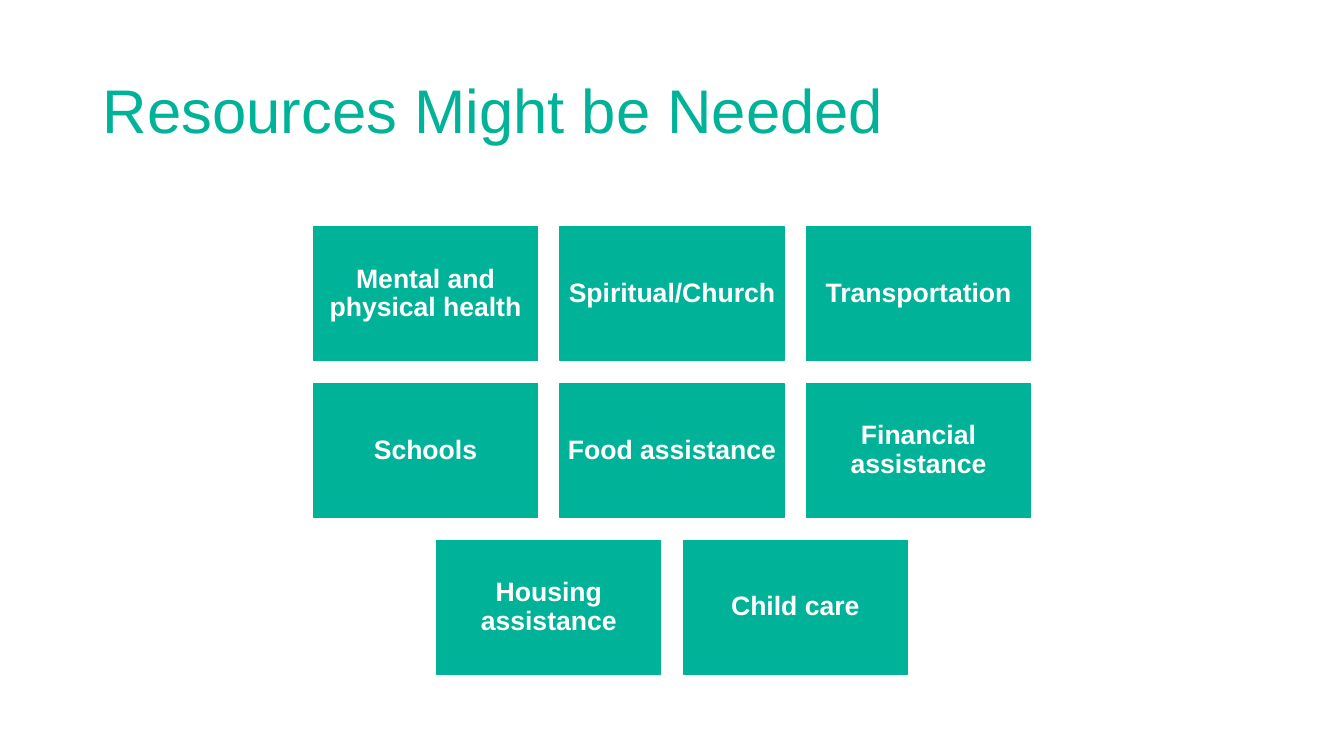
from dataclasses import dataclass

from pptx import Presentation
from pptx.dml.color import RGBColor
from pptx.enum.shapes import MSO_SHAPE
from pptx.enum.text import MSO_ANCHOR, PP_ALIGN
from pptx.util import Inches, Pt


@dataclass(frozen=True)
class Theme:
    """Hold the colours, type sizes and font of the slide."""
    green: RGBColor = RGBColor.from_string("00B398")
    white: RGBColor = RGBColor.from_string("FFFFFF")
    title_size: int = 44
    card_size: int = 19
    font: str = "Arial"


@dataclass(frozen=True)
class Grid:
    """Place centred rows of cards, in inches."""
    center: float = 6.665
    top: float = 2.25
    card_width: float = 2.22
    card_height: float = 1.33
    column_step: float = 2.445
    row_step: float = 1.555

    def cell(self, row, column, columns):
        """Return left, top, width and height of one card."""
        middle = self.center + (column - (columns - 1) / 2) * self.column_step
        return (middle - self.card_width / 2, self.top + row * self.row_step,
                self.card_width, self.card_height)


THEME = Theme()
GRID = Grid()
RESOURCES = [
    ["Mental and physical health", "Spiritual/Church", "Transportation"],
    ["Schools", "Food assistance", "Financial assistance"],
    ["Housing assistance", "Child care"],
]


def write_text(box, text, *, size, color, bold=False, align=PP_ALIGN.LEFT, inset=(0.1, 0.05)):
    """Write one formatted paragraph in the middle of a box."""
    frame = box.text_frame
    frame.word_wrap = True
    frame.vertical_anchor = MSO_ANCHOR.MIDDLE
    frame.margin_left = frame.margin_right = Inches(inset[0])
    frame.margin_top = frame.margin_bottom = Inches(inset[1])
    para = frame.paragraphs[0]
    para.alignment = align
    para.line_spacing = 0.9
    span = para.add_run()
    span.text = text
    span.font.name = THEME.font
    span.font.size = Pt(size)
    span.font.bold = bold
    span.font.color.rgb = color


def add_title(page, text):
    """Add the slide title."""
    box = page.shapes.add_textbox(*map(Inches, (0.92, 0.4, 11.5, 1.45)))
    write_text(box, text, size=THEME.title_size, color=THEME.green)


def add_card(page, text, place):
    """Add one green resource card."""
    card = page.shapes.add_shape(MSO_SHAPE.RECTANGLE, *map(Inches, place))
    card.shadow.inherit = False
    card.fill.solid()
    card.fill.fore_color.rgb = THEME.green
    card.line.color.rgb = THEME.green
    card.line.width = Pt(1)
    write_text(card, text, size=THEME.card_size, color=THEME.white, bold=True,
               align=PP_ALIGN.CENTER, inset=(0.07, 0.08))


def main():
    """Build the resources slide and save the deck."""
    deck = Presentation()
    deck.slide_width, deck.slide_height = Inches(13.33), Inches(7.5)
    page = deck.slides.add_slide(deck.slide_layouts[6])
    add_title(page, "Resources Might be Needed")
    for row, names in enumerate(RESOURCES):
        for column, name in enumerate(names):
            add_card(page, name, GRID.cell(row, column, len(names)))
    deck.save("out.pptx")


if __name__ == "__main__":
    main()
